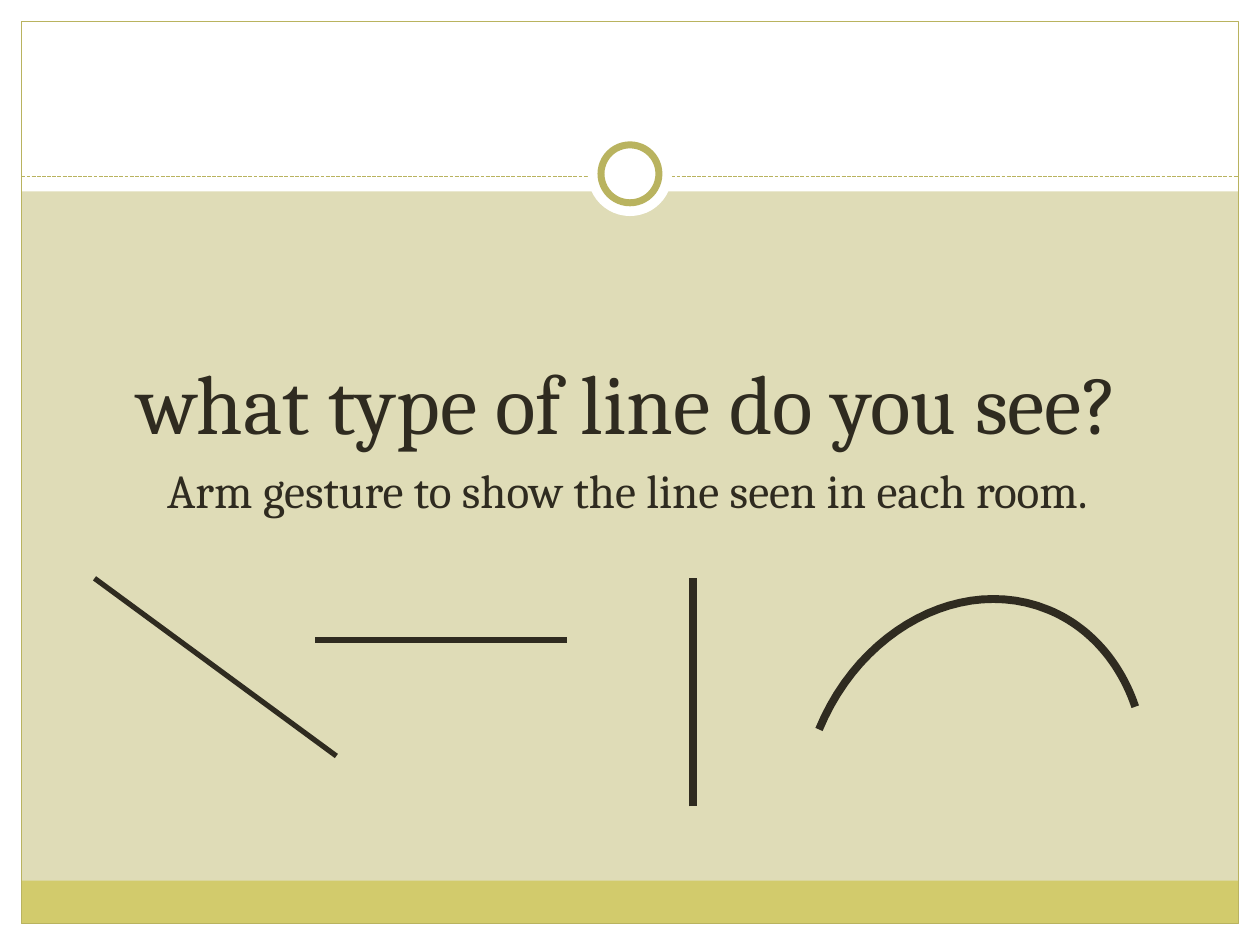
from lxml import etree
from pptx import Presentation
from pptx.dml.color import RGBColor
from pptx.enum.dml import MSO_LINE
from pptx.enum.shapes import MSO_CONNECTOR, MSO_SHAPE
from pptx.enum.text import PP_ALIGN
from pptx.oxml.ns import qn
from pptx.util import Inches, Pt

RECT, OVAL = MSO_SHAPE.RECTANGLE, MSO_SHAPE.OVAL
STRAIGHT = MSO_CONNECTOR.STRAIGHT
DASH = MSO_LINE.SQUARE_DOT
CENTER = PP_ALIGN.CENTER
WHITE = RGBColor(0xFF, 0xFF, 0xFF)
SAND = RGBColor(0xDF, 0xDC, 0xB7)
LIME = RGBColor(0xD2, 0xCB, 0x6C)
OLIVE = RGBColor(0xB9, 0xB3, 0x5F)
INK = RGBColor(0x2F, 0x2B, 0x20)

deck = Presentation()
deck.slide_width, deck.slide_height = Inches(10), Inches(7.5)
COL = deck.slide_width / 100
ROW = deck.slide_height / 75
slide = deck.slides.add_slide(deck.slide_layouts[6])
slide.background.fill.solid()
slide.background.fill.fore_color.rgb = SAND
shapes = slide.shapes


def block(kind, x, y, w, h, fill, edge=0):
    item = shapes.add_shape(kind, int(x * COL), int(y * ROW), int(w * COL), int(h * ROW))
    item.shadow.inherit = False
    if fill is None:
        item.fill.background()
    else:
        item.fill.solid()
        item.fill.fore_color.rgb = fill
    if edge:
        item.line.color.rgb = OLIVE
        item.line.width = Pt(edge)
    else:
        item.line.fill.background()


def stroke(x1, y1, x2, y2, color, width):
    line = shapes.add_connector(STRAIGHT, int(x1 * COL), int(y1 * ROW), int(x2 * COL), int(y2 * ROW))
    line.line.color.rgb = color
    line.line.width = Pt(width)
    etree.SubElement(line._element.spPr, qn("a:effectLst"))
    return line


EDGE = 1.7
for x, y, w, h in [
    (0, 75 - EDGE, 100, EDGE),
    (0, 0, 100, 15.2),
    (0, 0, EDGE, 75),
    (100 - EDGE, 0, EDGE, 75),
]:
    block(RECT, x, y, w, h, WHITE)
block(RECT, EDGE, 69.9, 100 - 2 * EDGE, 3.4, LIME)
block(RECT, EDGE, EDGE, 100 - 2 * EDGE, 75 - 2 * EDGE, None, 0.75)
stroke(EDGE, 14, 100 - EDGE, 14, OLIVE, 0.75).line.dash_style = DASH
for size, edge in [(6.7, 0), (4.6, 4)]:
    block(OVAL, 50 - size / 2, 13.8 - size / 2, size, size, WHITE, edge)

box = shapes.add_textbox(int(3.3 * COL), int(27.3 * ROW), int(93 * COL), int(15 * ROW))
frame = box.text_frame
frame.word_wrap = True
frame.text = "what type of line do you see?\nArm gesture to show the line seen in each room."
for para, size, gap in zip(frame.paragraphs, (48, 27), (0, 6)):
    para.alignment = CENTER
    para.space_before = Pt(gap)
    font = para.runs[0].font
    font.name = "Cambria"
    font.size = Pt(size)
    font.color.rgb = INK

for x1, y1, x2, y2, width in [
    (7.5, 45.9, 26.7, 60, 3),
    (25, 50.8, 45, 50.8, 3),
    (55, 64, 55, 45.9, 4.5),
]:
    stroke(x1, y1, x2, y2, INK, width)

CURVES = [
    [(90.1, 56.1), (88.9, 52.5), (86.4, 49.7), (83.2, 48.4)],
    [(83.2, 48.4), (76.4, 45.6), (68.3, 49.9), (65, 57.9)],
]
STEPS = 24
dots = []
for curve in CURVES:
    for step in range(1, STEPS + 1):
        t = step / STEPS
        parts = ((1 - t) ** 3, 3 * t * (1 - t) ** 2, 3 * t * t * (1 - t), t ** 3)
        dots.append(tuple(sum(p * dot[i] for p, dot in zip(parts, curve)) for i in (0, 1)))
start = CURVES[0][0]
path = shapes.build_freeform(int(start[0] * COL), int(start[1] * ROW))
path.add_line_segments([(int(x * COL), int(y * ROW)) for x, y in dots], close=False)
arc = path.convert_to_shape()
arc.shadow.inherit = False
arc.fill.background()
arc.line.color.rgb = INK
arc.line.width = Pt(4.5)

deck.save("out.pptx")
